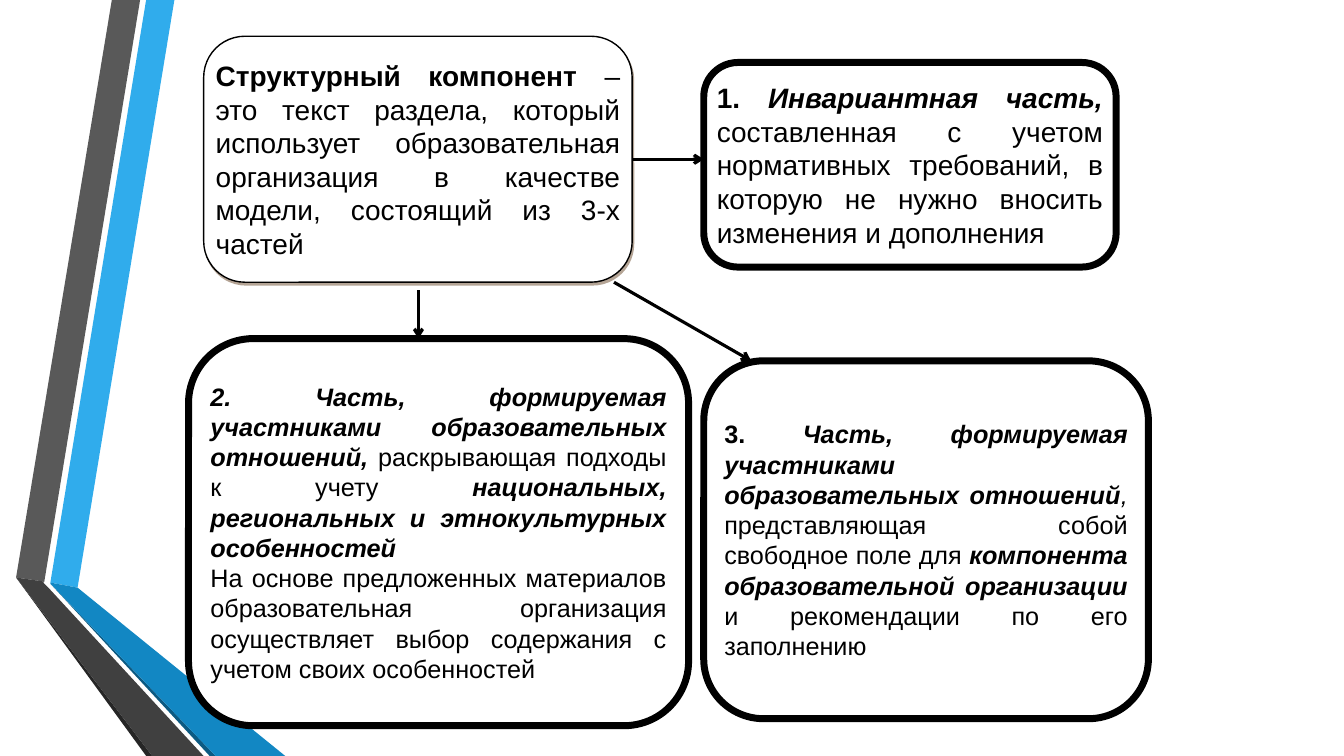
from dataclasses import dataclass

from lxml import etree
from pptx import Presentation
from pptx.dml.color import RGBColor
from pptx.enum.shapes import MSO_CONNECTOR, MSO_SHAPE
from pptx.enum.text import MSO_ANCHOR, PP_ALIGN
from pptx.oxml.ns import qn
from pptx.util import Pt

PX = 9144  # 100 px to the inch
ROUND = MSO_SHAPE.ROUNDED_RECTANGLE
LINE = MSO_CONNECTOR.STRAIGHT
MIDDLE = MSO_ANCHOR.MIDDLE
JUSTIFY = PP_ALIGN.JUSTIFY


@dataclass(frozen=True)
class Theme:
    font: str = "Arial"
    ink: str = "000000"
    paper: str = "FFFFFF"
    shade: str = "6B4B2C"
    sky: str = "30ACEC"
    blue: str = "1287C3"
    navy: str = "0C5A82"
    grey: str = "595959"
    dark: str = "404040"
    coal: str = "262626"
    large: int = 20
    small: int = 18
    thin: float = 1
    thick: float = 5
    arrow: float = 2.25


THEME = Theme()

# Side ribbon: colour and outline in px
BANDS = [
    (THEME.sky, [(50, 578), (77, 583), (173, 0), (145, 0)]),
    (THEME.grey, [(139, 0), (111, 0), (16, 573), (44, 577)]),
    (THEME.coal, [(16, 573), (145, 750), (151, 750)]),
    (THEME.navy, [(50, 579), (208, 750), (214, 750)]),
    (THEME.blue, [(50, 579), (214, 750), (283, 750), (77, 583), (50, 578)]),
    (THEME.dark, [(202, 750), (48, 583), (43, 578), (44, 577), (16, 573), (151, 750)]),
]

# Text: paragraphs of (wording, style), where b is bold and i is italic
WHOLE = [[
    ("Структурный компонент ", "b"),
    ("– это текст раздела, который использует образовательная организация "
     "в качестве модели, состоящий из 3-х частей", ""),
]]
FIRST = [[
    ("1. ", "b"),
    ("Инвариантная часть, ", "bi"),
    ("составленная с учетом нормативных требований, в которую не нужно "
     "вносить изменения и дополнения", ""),
]]
SECOND = [
    [
        ("2. Часть, формируемая участниками образовательных отношений, ", "bi"),
        ("раскрывающая подходы к учету ", ""),
        ("национальных, региональных и этнокультурных особенностей ", "bi"),
    ],
    [("На основе предложенных материалов образовательная организация "
      "осуществляет выбор содержания с учетом своих особенностей", "")],
]
THIRD = [[
    ("3. ", "b"),
    ("Часть, формируемая участниками образовательных отношений", "bi"),
    (",", "i"),
    (" представляющая собой свободное поле для ", ""),
    ("компонента образовательной организации ", "bi"),
    ("и рекомендации по его заполнению", ""),
]]

# Arrows: start and end in px
ARROWS = [
    ((627, 158), (698, 158)),
    ((609, 280), (745, 358)),
    ((415, 288), (415, 336)),
]


def color(code):
    return RGBColor.from_string(code)


def paint(shape, fill):
    shape.shadow.inherit = False
    shape.fill.solid()
    shape.fill.fore_color.rgb = color(fill)


def add_band(slide, fill, points):
    pen = slide.shapes.build_freeform(*points[0], scale=PX)
    pen.add_line_segments(points[1:], close=True)
    band = pen.convert_to_shape()
    paint(band, fill)
    band.line.fill.background()


def add_text(frame, paras, size, side):
    frame.word_wrap = True
    frame.vertical_anchor = MIDDLE
    frame.margin_left = frame.margin_right = side * PX
    frame.margin_top = frame.margin_bottom = 3 * PX
    for index, runs in enumerate(paras):
        para = frame.add_paragraph() if index else frame.paragraphs[0]
        para.alignment = JUSTIFY
        for words, style in runs:
            run = para.add_run()
            run.text = words
            run.font.name = THEME.font
            run.font.size = Pt(size)
            run.font.color.rgb = color(THEME.ink)
            run.font.bold = "b" in style
            run.font.italic = "i" in style


def add_box(slide, place, paras, size, width=THEME.thick, side=3):
    box = slide.shapes.add_shape(ROUND, *(n * PX for n in place))
    box.adjustments[0] = 0.167
    paint(box, THEME.paper)
    box.line.color.rgb = color(THEME.ink)
    box.line.width = Pt(width)
    add_text(box.text_frame, paras, size, side)
    return box


def add_shade(box):
    effects = box._element.spPr.find(qn("a:effectLst"))
    shade = etree.SubElement(effects, qn("a:outerShdw"), blurRad="0",
                             dist=str(Pt(2.2)), dir=str(63 * 60000),
                             algn="ctr", rotWithShape="0")
    tint = etree.SubElement(shade, qn("a:srgbClr"), val=THEME.shade)
    etree.SubElement(tint, qn("a:alpha"), val="50000")


def add_arrow(slide, start, end):
    arrow = slide.shapes.add_connector(LINE, *(n * PX for n in start + end))
    arrow.line.color.rgb = color(THEME.ink)
    arrow.line.width = Pt(THEME.arrow)
    etree.SubElement(arrow.line._get_or_add_ln(), qn("a:tailEnd"), type="arrow")
    etree.SubElement(arrow._element.spPr, qn("a:effectLst"))


def main():
    deck = Presentation()
    deck.slide_width, deck.slide_height = 1333 * PX, 750 * PX
    slide = deck.slides.add_slide(deck.slide_layouts[6])

    # Side ribbon
    for fill, points in BANDS:
        add_band(slide, fill, points)

    # The component and its three parts
    whole = add_box(slide, (202, 36, 425, 244), WHOLE, THEME.large, THEME.thin, 0)
    add_shade(whole)
    add_box(slide, (698, 62, 409, 203), FIRST, THEME.large)
    add_box(slide, (187, 336, 496, 384), SECOND, THEME.small)
    add_box(slide, (698, 358, 441, 355), THIRD, THEME.small)

    # Arrows to the parts
    for start, end in ARROWS:
        add_arrow(slide, start, end)

    deck.save("out.pptx")


if __name__ == "__main__":
    main()
